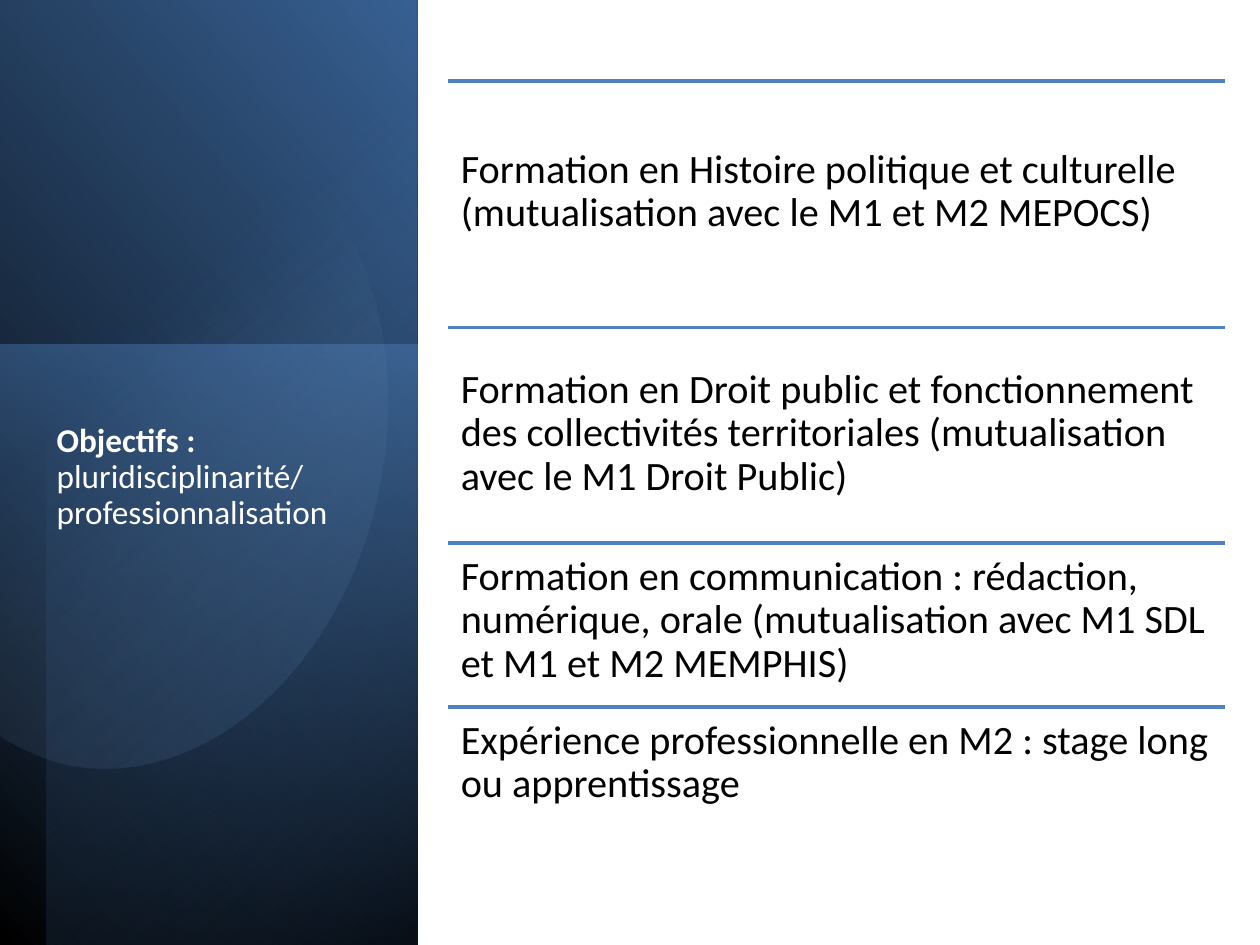
from lxml.etree import SubElement as Sub
from pptx import Presentation
from pptx.dml.color import RGBColor as Rgb
from pptx.enum.shapes import MSO_CONNECTOR as Link, MSO_SHAPE as Kind
from pptx.enum.text import MSO_ANCHOR as Anchor, PP_ALIGN as Align
from pptx.oxml import parse_xml
from pptx.oxml.ns import nsdecls, qn
from pptx.util import Cm, Pt

HUE = {"black": "000000", "white": "FFFFFF", "blue": "4F81BD", "steel": "376092",
       "navy": "254061", "pale": "95B3D7"}
FONT = "Calibri"

# Line height, gap from line to text, wording
GOALS = [
    (1.63, 1.12, "Formation en Histoire politique et culturelle "
                 "(mutualisation avec le M1 et M2 MEPOCS)"),
    (6.6, 0.58, "Formation en Droit public et fonctionnement des collectivités "
                "territoriales (mutualisation avec le M1 Droit Public)"),
    (10.95, 0, "Formation en communication : rédaction, numérique, orale "
               "(mutualisation avec M1 SDL et M1 et M2 MEMPHIS)"),
    (14.25, 0, "Expérience professionnelle en M2 : stage long ou apprentissage"),
]

# Arc outline in cm: start, cubic curves, closing corners
START = (3.05, 2.26)
CURVES = [
    ((3.38, 2.24), (3.73, 2.26), (4.06, 2.31)),
    ((6.78, 2.87), (8.36, 6.27), (7.62, 9.88)),
    ((6.88, 13.49), (4.09, 15.95), (1.37, 15.42)),
    ((0.86, 15.29), (0.41, 15.09), (-0.03, 14.81)),
]
EDGE = [(-0.3, 14.58), (0.23, 3.51), (0.64, 3.18)]
LAST = ((1.37, 2.64), (2.21, 2.31), START)


def fade(shape, stops, angle):
    """Fill with a gradient of (position, colour, opacity) stops, no outline."""
    grad = parse_xml(f'<a:gradFill {nsdecls("a")} rotWithShape="1"/>')
    row = Sub(grad, qn("a:gsLst"))
    for pos, name, alpha in stops:
        stop = Sub(row, qn("a:gs"), pos=str(pos * 1000))
        tone = Sub(stop, qn("a:srgbClr"), val=HUE[name])
        if alpha < 100:
            Sub(tone, qn("a:alpha"), val=str(alpha * 1000))
    Sub(grad, qn("a:lin"), ang=str(round(angle * 60000)), scaled="0")
    shape._element.spPr.insert(2, grad)
    shape.line.fill.background()
    shape.shadow.inherit = False


def turned(slide, box, turn, flip, stops, angle):
    """Rectangle that covers box once it has made a quarter turn."""
    x, y, w, h = box
    rect = slide.shapes.add_shape(Kind.RECTANGLE, Cm(x + (w - h) / 2),
                                  Cm(y + (h - w) / 2), Cm(h), Cm(w))
    rect.rotation = turn
    if flip:
        rect._element.spPr.get_or_add_xfrm().set("flipH", "1")
    fade(rect, stops, angle)


def bend(start, curve, steps=24):
    """Points along a cubic curve, without its start."""
    ends = (start, *curve)
    for i in range(1, steps + 1):
        t = i / steps
        part = ((1 - t) ** 3, 3 * t * (1 - t) ** 2, 3 * t * t * (1 - t), t ** 3)
        yield tuple(sum(k * p[axis] for k, p in zip(part, ends)) for axis in (0, 1))


def write(para, text, size=23, color="black", bold=False):
    """Add text to a paragraph; a newline becomes a line break."""
    for i, line in enumerate(text.split("\n")):
        if i:
            para.add_line_break()
        run = para.add_run()
        run.text = line
        run.font.name, run.font.size, run.font.bold = FONT, Pt(size), bold
        run.font.color.rgb = Rgb.from_string(HUE[color])
    para.line_spacing = 0.9
    para.alignment = Align.LEFT


def panel(slide, x, y, w, h):
    # Layered gradients
    turned(slide, (x, y, w, h), 90, True,
           [(0, "black", 100), (100, "steel", 100)], 310)
    turned(slide, (x, y + 6.95, w, h - 6.95), 270, False,
           [(0, "blue", 50), (100, "navy", 0)], 190)
    turned(slide, (x + 0.94, y, w - 0.94, h), 270, True,
           [(0, "black", 59), (69, "blue", 0)], 220)

    # Soft arc
    dots, pen = [], START
    for curve in CURVES:
        dots += bend(pen, curve)
        pen = curve[-1]
    dots += EDGE + list(bend(EDGE[-1], LAST))
    arc = slide.shapes.build_freeform(Cm(x + START[0]), Cm(y + START[1]))
    arc.add_line_segments([(Cm(x + a), Cm(y + b)) for a, b in dots])
    fade(arc.convert_to_shape(), [(39, "pale", 0), (100, "steel", 26)], 51.6)

    # Title, brought in front of the panel
    title = slide.shapes.title
    title.left, title.top = Cm(x + 0.89), Cm(y + 7.7)
    title.width, title.height = Cm(6.5), Cm(8.53)
    frame = title.text_frame
    frame.word_wrap = True
    frame.vertical_anchor = Anchor.TOP
    frame.margin_top = Cm(0.84)
    para = frame.paragraphs[0]
    write(para, "Objectifs : ", size=19, color="white", bold=True)
    write(para, "pluridisciplinarité/\nprofessionnalisation", size=19, color="white")
    slide.shapes._spTree.append(title._element)


def goals(slide, x, y, w):
    group = slide.shapes.add_group_shape().shapes
    for top, gap, text in GOALS:
        rule = group.add_connector(Link.STRAIGHT, Cm(x), Cm(y + top),
                                   Cm(x + w), Cm(y + top))
        rule.line.color.rgb = Rgb.from_string(HUE["blue"])
        rule.line.width = Pt(2)
        Sub(rule._element.spPr, qn("a:effectLst"))

        frame = group.add_textbox(Cm(x), Cm(y + top + gap), Cm(w), Cm(3.28)).text_frame
        frame.word_wrap = True
        frame.margin_left = frame.margin_right = Cm(0.25)
        frame.margin_top = frame.margin_bottom = Cm(0.25)
        write(frame.paragraphs[0], text)


def main():
    deck = Presentation()
    deck.slide_width, deck.slide_height = Cm(25.4), Cm(19.05)
    slide = deck.slides.add_slide(deck.slide_layouts[5])
    panel(slide, 0, 0, 8.41, 19.05)
    goals(slide, 9.04, 0, 15.66)
    deck.save("out.pptx")


if __name__ == "__main__":
    main()
